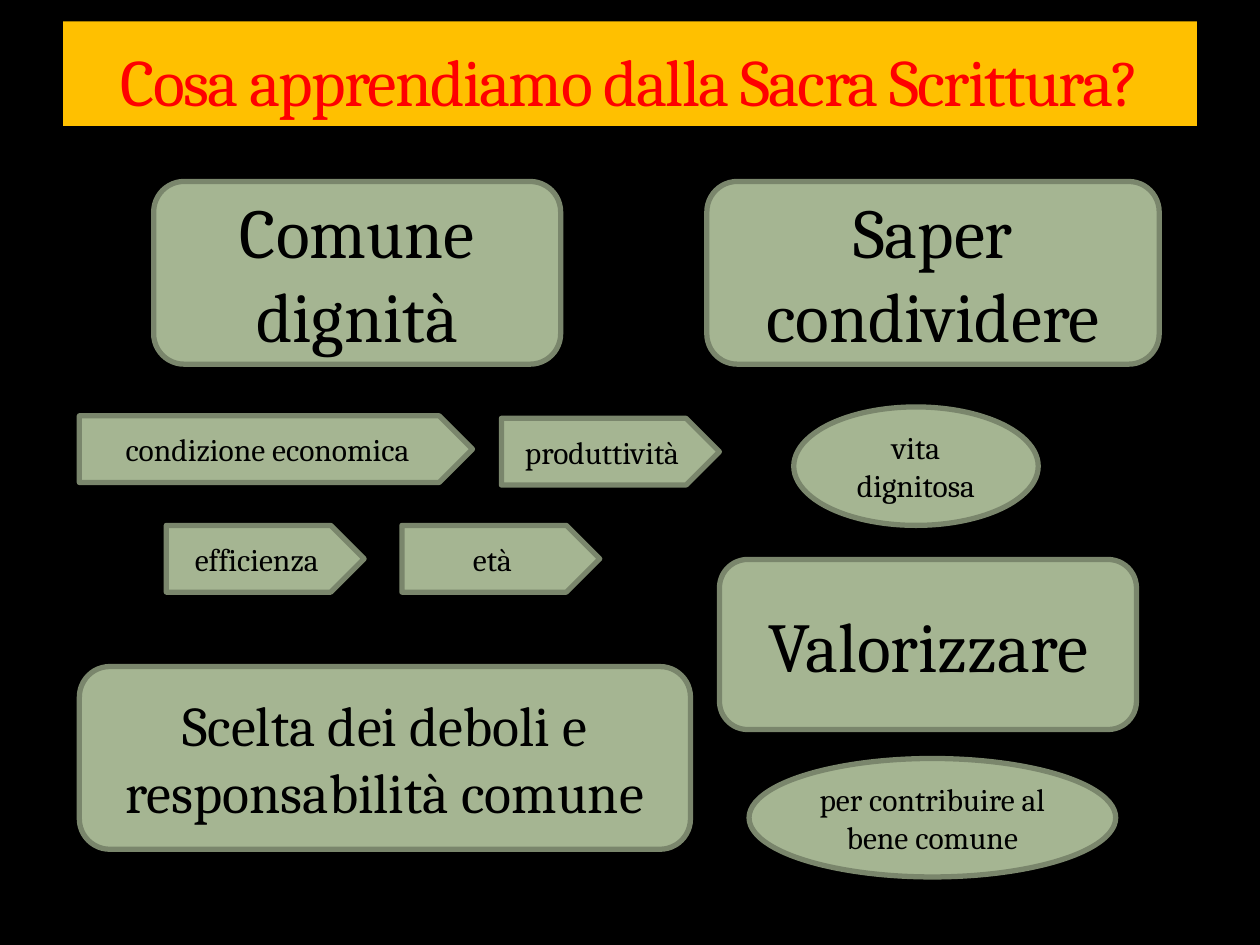
from pptx import Presentation
from pptx.dml.color import RGBColor
from pptx.enum.shapes import MSO_SHAPE as Preset
from pptx.enum.text import MSO_ANCHOR as Anchor, MSO_AUTO_SIZE as AutoSize, PP_ALIGN as Align
from pptx.util import Inches, Pt

COLORS = {
    "background": "000000",
    "banner": "FFC000",
    "title": "FF0000",
    "sage": "A5B592",
    "border": "7A866C",
    "text": "000000",
}
FONT = "Cambria"


def color(name):
    """Return the named palette colour."""
    return RGBColor.from_string(COLORS[name])


def paint(fill, name):
    """Give a fill a solid palette colour."""
    fill.solid()
    fill.fore_color.rgb = color(name)


def write(shape, text, size=18, ink="text", anchor=Anchor.MIDDLE, spacing=None):
    """Write centred text in a shape and return its run."""
    frame = shape.text_frame
    frame.word_wrap = True
    frame.auto_size = AutoSize.NONE
    frame.vertical_anchor = anchor
    paragraph = frame.paragraphs[0]
    paragraph.alignment = Align.CENTER
    run = paragraph.add_run()
    run.text = text
    run.font.name = FONT
    run.font.size = Pt(size)
    run.font.color.rgb = color(ink)
    if spacing is not None:
        run.font._element.set("spc", str(spacing))
    return run


def place_title(slide, text, left, top, width, height):
    """Turn the title placeholder into a coloured banner."""
    title = slide.shapes.title
    title.left, title.top = Inches(left), Inches(top)
    title.width, title.height = Inches(width), Inches(height)
    paint(title.fill, "banner")
    write(title, text, size=37.8, ink="title", anchor=Anchor.BOTTOM, spacing=-100)


def add_bubble(slide, preset, text, left, top, width, height, size=18):
    """Add one bordered sage shape with its text."""
    box = (Inches(value) for value in (left, top, width, height))
    shape = slide.shapes.add_shape(preset, *box)
    shape.shadow.inherit = False
    paint(shape.fill, "sage")
    paint(shape.line.fill, "border")
    shape.line.width = Pt(3)
    write(shape, text, size=size)


def add_themes(slide, left, top):
    """Add the four large rounded themes."""
    themes = [
        ("Comune dignità", 0.59, 0, 3.23, 1.45, 40),
        ("Saper condividere", 4.98, 0, 3.59, 1.45, 40),
        ("Valorizzare", 5.08, 3, 3.31, 1.35, 40),
        ("Scelta dei deboli e responsabilità comune", 0, 3.85, 4.85, 1.45, 32),
    ]
    for text, x, y, width, height, size in themes:
        add_bubble(slide, Preset.FLOWCHART_ALTERNATE_PROCESS, text,
                   left + x, top + y, width, height, size)


def add_criteria(slide, left, top, height=0.53):
    """Add the two rows of pentagon arrows."""
    criteria = [
        ("condizione economica", 0, 0, 3.12),
        ("produttività", 3.35, 0.02, 1.73),
        ("efficienza", 0.69, 0.87, 1.57),
        ("età", 2.56, 0.87, 1.57),
    ]
    for text, x, y, width in criteria:
        add_bubble(slide, Preset.PENTAGON, text, left + x, top + y, width, height)


def add_aims(slide, center, top, height=0.94):
    """Add the two ellipses of the right column."""
    aims = [
        ("vita dignitosa", -0.13, 0, 1.94),
        ("per contribuire al bene comune", 0, 2.79, 2.91),
    ]
    for text, shift, y, width in aims:
        add_bubble(slide, Preset.OVAL, text, center + shift - width / 2, top + y, width, height)


def main():
    """Build and save the slide."""
    presentation = Presentation()
    presentation.slide_width, presentation.slide_height = Inches(10), Inches(7.5)
    slide = presentation.slides.add_slide(presentation.slide_layouts[5])
    paint(slide.background.fill, "background")
    place_title(slide, "Cosa apprendiamo dalla Sacra Scrittura?", 0.5, 0.17, 9, 0.83)
    add_themes(slide, 0.63, 1.44)
    add_criteria(slide, 0.63, 3.3)
    add_aims(slide, 7.4, 3.23)
    presentation.save("out.pptx")


if __name__ == "__main__":
    main()
